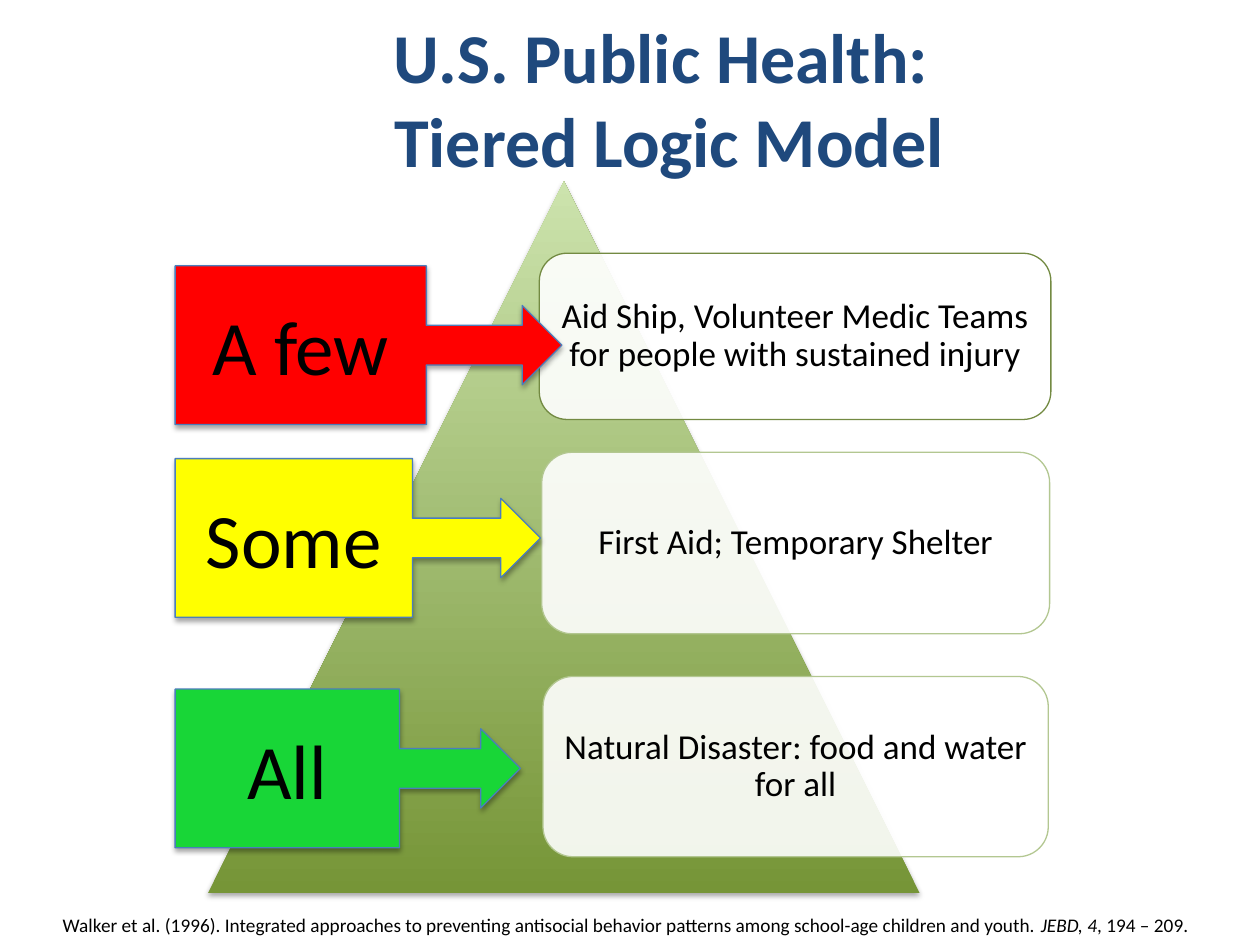
from lxml.etree import SubElement
from pptx import Presentation
from pptx.dml.color import RGBColor
from pptx.enum.shapes import MSO_SHAPE as SHAPE
from pptx.enum.text import MSO_ANCHOR as ANCHOR, PP_ALIGN as ALIGN
from pptx.oxml.ns import qn
from pptx.util import Pt

FONT = "Calibri"
BLACK = "000000"
TIERS = [
    ("A few", "FF0000", 151.9, 221, "738A42", (308.2, 144.7, 292.3, 95),
     "Aid Ship, Volunteer Medic Teams for people with sustained injury"),
    ("Some", "FFFF00", 262.1, 208.8, "B3C791", (309.6, 258.5, 290.2, 103.7),
     "First Aid; Temporary Shelter"),
    ("All", "18D637", 393.8, 197.3, "B3C791", (310.3, 386.6, 288.7, 103),
     "Natural Disaster: food and water for all"),
]


def rgb(color):
    """Turn a hex string into a colour."""
    return RGBColor.from_string(color)


def style_runs(p, size, color=BLACK, bold=False):
    """Centre a paragraph and format its runs."""
    p.alignment = ALIGN.CENTER
    for r in p.runs:
        r.font.name, r.font.size, r.font.bold = FONT, Pt(size), bold
        r.font.color.rgb = rgb(color)


def add_shadow(sp):
    """Give a shape a soft shadow that falls straight down."""
    sp.shadow.inherit = False
    effects = sp._element.spPr.find(qn("a:effectLst"))
    shadow = SubElement(effects, qn("a:outerShdw"), blurRad=str(Pt(3.1)),
                        dist=str(Pt(1.8)), dir="5400000", rotWithShape="0")
    color = SubElement(shadow, qn("a:srgbClr"), val=BLACK)
    SubElement(color, qn("a:alpha"), val="35000")


def add_box(s, kind, box, fill, line):
    """Add a preset shape with a solid fill and a thin outline."""
    sp = s.shapes.add_shape(kind, *map(Pt, box))
    sp.shadow.inherit = False
    sp.fill.solid()
    sp.fill.fore_color.rgb = rgb(fill)
    sp.line.color.rgb = rgb(line)
    sp.line.width = Pt(0.75)
    return sp


def set_label(sp, text, size):
    """Write centred text into a shape."""
    tf = sp.text_frame
    tf.text = text
    tf.word_wrap = True
    tf.vertical_anchor = ANCHOR.MIDDLE
    style_runs(tf.paragraphs[0], size)
    return tf


def add_pyramid(s, box):
    """Add the green gradient triangle."""
    sp = s.shapes.add_shape(SHAPE.ISOSCELES_TRIANGLE, *map(Pt, box))
    sp.line.fill.background()
    sp.fill.gradient()
    sp.fill.gradient_angle = 90
    for stop, color, position in zip(sp.fill.gradient_stops, ("769537", "CCE3AD"), (0, 1)):
        stop.color.rgb = rgb(color)
        stop.position = position
    add_shadow(sp)


def add_card(s, box, text, line):
    """Add a translucent rounded card with an example."""
    sp = add_box(s, SHAPE.ROUNDED_RECTANGLE, box, "FFFFFF", line)
    color = sp._element.spPr.find(qn("a:solidFill"))[0]
    SubElement(color, qn("a:alpha"), val="90000")
    tf = set_label(sp, text, 20)
    tf.margin_left = tf.margin_right = tf.margin_top = tf.margin_bottom = Pt(6)
    tf.paragraphs[0].line_spacing = 0.9


def add_callout(s, box, text, fill):
    """Add a coloured tier callout that points right."""
    sp = add_box(s, SHAPE.RIGHT_ARROW_CALLOUT, box, fill, "4B7EBC")
    add_shadow(sp)
    set_label(sp, text, 44)


def add_textbox(s, box):
    """Add a wrapping text box and return its text frame."""
    tf = s.shapes.add_textbox(*map(Pt, box)).text_frame
    tf.word_wrap = True
    return tf


def add_title(s, box):
    """Add the two-line title."""
    tf = add_textbox(s, box)
    tf.text = "U.S. Public Health: \nTiered Logic Model"
    for p in tf.paragraphs:
        style_runs(p, 40, "1F497D", True)


def add_citation(s, box):
    """Add the source line with the journal in italics."""
    p = add_textbox(s, box).paragraphs[0]
    parts = [
        ("Walker et al. (1996). Integrated approaches to preventing antisocial "
         "behavior patterns among school-age children and youth. ", False),
        ("JEBD, 4", True),
        (", 194 – 209.", False),
    ]
    for text, italic in parts:
        r = p.add_run()
        r.text = text
        r.font.italic = italic
    style_runs(p, 11)


def main():
    """Build and save the slide."""
    prs = Presentation()
    prs.slide_width, prs.slide_height = Pt(720), Pt(540)
    s = prs.slides.add_slide(prs.slide_layouts[6])
    add_pyramid(s, (118.8, 103.7, 406.8, 406.8))
    for _, _, _, _, line, box, example in TIERS:
        add_card(s, box, example, line)
    add_title(s, (58.3, 4.3, 648, 104.4))
    add_citation(s, (12.2, 518.4, 690.5, 20.9))
    for name, fill, top, width, *_ in reversed(TIERS):
        add_callout(s, (100.1, top, width, 90.7), name, fill)
    prs.save("out.pptx")


if __name__ == "__main__":
    main()
